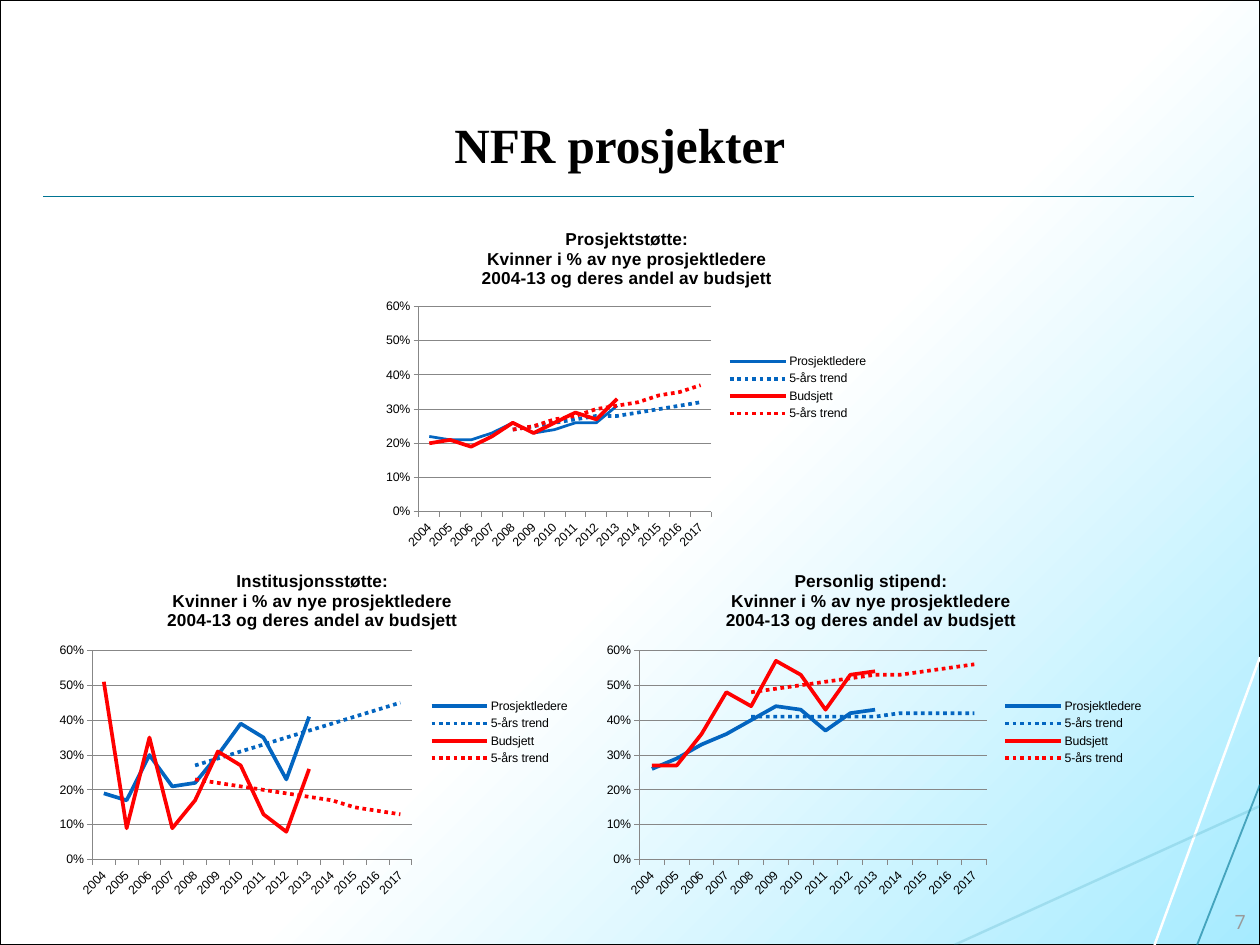
from pptx import Presentation
from pptx import util as u
from pptx.chart import data
from pptx.dml import color
from pptx.enum import chart as kinds, dml, shapes, text
from pptx.oxml import parse_xml
from pptx.oxml.ns import nsdecls, qn

COLORS = {
    "white": "FFFFFF", "black": "000000", "sky": "A6EBFF", "teal": "007492",
    "sea": "1184A0", "number": "9A9A9A", "grid": "878787",
    "leaders": "0365C0", "budget": "FF0000",
}
YEARS = [str(year) for year in range(2004, 2018)]
SERIES = [("Prosjektledere", "leaders"), ("5-års trend", "leaders"),
          ("Budsjett", "budget"), ("5-års trend", "budget")]
CHARTS = [
    {"heading": "Prosjektstøtte:", "box": (4.28, 2.42, 5.59, 3.86),
     "plot_width": 0.59, "first_weight": 2.25,
     "values": [
         [0.22, 0.21, 0.21, 0.23, 0.26, 0.23, 0.24, 0.26, 0.26, 0.31],
         [0.24, 0.25, 0.26, 0.27, 0.28, 0.28, 0.29, 0.3, 0.31, 0.32],
         [0.2, 0.21, 0.19, 0.22, 0.26, 0.23, 0.26, 0.29, 0.27, 0.33],
         [0.24, 0.25, 0.27, 0.28, 0.3, 0.31, 0.32, 0.34, 0.35, 0.37]]},
    {"heading": "Institusjonsstøtte:", "box": (0.57, 6.28, 5.91, 3.94),
     "plot_width": 0.61, "first_weight": 3,
     "values": [
         [0.19, 0.17, 0.3, 0.21, 0.22, 0.3, 0.39, 0.35, 0.23, 0.41],
         [0.27, 0.29, 0.31, 0.33, 0.35, 0.37, 0.39, 0.41, 0.43, 0.45],
         [0.51, 0.09, 0.35, 0.09, 0.17, 0.31, 0.27, 0.13, 0.08, 0.26],
         [0.23, 0.22, 0.21, 0.2, 0.19, 0.18, 0.17, 0.15, 0.14, 0.13]]},
    {"heading": "Personlig stipend:", "box": (6.72, 6.28, 6.22, 3.94),
     "plot_width": 0.63, "first_weight": 3,
     "values": [
         [0.26, 0.29, 0.33, 0.36, 0.4, 0.44, 0.43, 0.37, 0.42, 0.43],
         [0.41, 0.41, 0.41, 0.41, 0.41, 0.41, 0.42, 0.42, 0.42, 0.42],
         [0.27, 0.27, 0.36, 0.48, 0.44, 0.57, 0.53, 0.43, 0.53, 0.54],
         [0.48, 0.49, 0.5, 0.51, 0.52, 0.53, 0.53, 0.54, 0.55, 0.56]]},
]


def rgb(name):
    """Return the named colour."""
    return color.RGBColor.from_string(COLORS[name])


def inches(*lengths):
    """Convert several lengths at once."""
    return [u.Inches(length) for length in lengths]


def add_line(page, start, end, shade, weight, opacity=100):
    """Draw a straight line without shadow, partly see-through if asked."""
    line = page.shapes.add_connector(shapes.MSO_CONNECTOR.STRAIGHT, *inches(*start, *end))
    line.line.color.rgb = rgb(shade)
    line.line.width = u.Pt(weight)
    properties = line._element.spPr
    if opacity < 100:
        properties.find(".//" + qn("a:srgbClr")).append(
            parse_xml(f'<a:alpha {nsdecls("a")} val="{opacity * 1000}"/>'))
    properties.append(parse_xml(f'<a:effectLst {nsdecls("a")}/>'))


def add_backdrop(page, width, height):
    """Paint the framed gradient and the lines in the lower right corner."""
    panel = page.shapes.add_shape(shapes.MSO_SHAPE.RECTANGLE, *inches(0, 0, width, height))
    panel.shadow.inherit = False
    panel.line.color.rgb = rgb("black")
    panel.line.width = u.Pt(1)
    panel.fill.gradient()
    panel.fill.gradient_angle = 315
    for stop, shade, position in zip(panel.fill.gradient_stops, ("white", "sky"), (0.54, 1)):
        stop.color.rgb = rgb(shade)
        stop.position = position
    add_line(page, (width, 7.42), (13.03, height), "white", 2)
    add_line(page, (width, 9.1), (10.77, height), "sea", 2, 16)
    add_line(page, (width, 8.86), (13.51, height), "teal", 1.5, 60)


def add_text(page, box, words, font, size, shade, align, bold=False):
    """Place one line of formatted text in a box."""
    frame = page.shapes.add_textbox(*inches(*box)).text_frame
    frame.word_wrap = True
    frame.text = words
    para = frame.paragraphs[0]
    para.alignment = align
    span = para.runs[0]
    span.font.name = font
    span.font.size = u.Pt(size)
    span.font.bold = bold
    span.font.color.rgb = rgb(shade)
    return frame


def layout(x, y, size=None):
    """Return a manual chart layout, with an inner plot size if given."""
    target = '<c:layoutTarget val="inner"/>' if size else ""
    extent = f'<c:w val="{size[0]}"/><c:h val="{size[1]}"/>' if size else ""
    return parse_xml(
        f'<c:layout {nsdecls("c")}><c:manualLayout>{target}'
        f'<c:xMode val="edge"/><c:yMode val="edge"/><c:x val="{x}"/><c:y val="{y}"/>'
        f'{extent}</c:manualLayout></c:layout>')


def arrange_chart(chart, plot_width):
    """Fix the plot and legend places and leave the chart see-through."""
    clear = f'<c:spPr {nsdecls("c", "a")}><a:noFill/><a:ln><a:noFill/></a:ln></c:spPr>'
    space = chart._chartSpace
    space.find(qn("c:chart")).addnext(parse_xml(clear))
    plot = space.find(".//" + qn("c:plotArea"))
    for old in plot.findall(qn("c:layout")):
        plot.remove(old)
    plot.insert(0, layout(0.08, 0.27, (plot_width, 0.6)))
    plot.append(parse_xml(clear))
    legend = space.find(".//" + qn("c:legend"))
    for old in legend.findall(qn("c:layout")):
        legend.remove(old)
    legend.find(qn("c:legendPos")).addnext(layout(round(plot_width + 0.11, 2), 0.4))


def format_axes(chart):
    """Style both axes and the grid."""
    years, share = chart.category_axis, chart.value_axis
    share.minimum_scale, share.maximum_scale, share.major_unit = 0, 0.6, 0.1
    share.has_major_gridlines = True
    share.tick_labels.number_format = "0%"
    share.tick_labels.number_format_is_linked = False
    for line in (years.format.line, share.format.line, share.major_gridlines.format.line):
        line.color.rgb = rgb("grid")
        line.width = u.Pt(0.75)
    for axis in (years, share):
        axis.major_tick_mark = kinds.XL_TICK_MARK.OUTSIDE
        axis.tick_labels.font.size = u.Pt(10)
    years._element.find(".//" + qn("a:bodyPr")).set("rot", "-2700000")


def add_trend_chart(page, box, heading, values, plot_width, first_weight):
    """Add a line chart of shares with dotted five-year trends."""
    table = data.CategoryChartData(number_format="0%")
    table.categories = YEARS
    gap = [None] * 4
    for index, (name, shade) in enumerate(SERIES):
        table.add_series(name, gap + values[index] if index % 2 else values[index] + gap)
    chart = page.shapes.add_chart(kinds.XL_CHART_TYPE.LINE, *inches(*box), table).chart
    chart.font.name = "Arial"
    chart.font.size = u.Pt(10)
    chart.font.color.rgb = rgb("black")
    chart.has_title = True
    title = chart.chart_title.text_frame
    title.text = f"{heading}\nKvinner i % av nye prosjektledere\n2004-13 og deres andel av budsjett"
    for para in title.paragraphs:
        para.font.name = "Arial"
        para.font.size = u.Pt(14)
        para.font.bold = True
        para.font.color.rgb = rgb("black")
    chart.has_legend = True
    chart.legend.position = kinds.XL_LEGEND_POSITION.RIGHT
    chart.legend.include_in_layout = False
    chart.plots[0].vary_by_categories = False
    for index, series in enumerate(chart.plots[0].series):
        series.smooth = False
        series.format.line.color.rgb = rgb(SERIES[index][1])
        series.format.line.width = u.Pt(3 if index else first_weight)
        if index % 2:
            series.format.line.dash_style = dml.MSO_LINE.ROUND_DOT
    format_axes(chart)
    arrange_chart(chart, plot_width)


def main():
    """Build and save the slide."""
    deck = Presentation()
    width, height = 14.22, 10.67
    deck.slide_width, deck.slide_height = inches(width, height)
    page = deck.slides.add_slide(deck.slide_layouts[6])
    add_backdrop(page, width, height)
    add_line(page, (0.49, 2.22), (13.47, 2.22), "teal", 1)
    add_text(page, (0.5, 1.24, 12.99, 1.46), "NFR prosjekter", "Times New Roman", 40,
             "black", text.PP_ALIGN.CENTER, True)
    number = add_text(page, (13.75, 10.21, 0.35, 0.39), "7", "Open Sans", 16,
                      "number", text.PP_ALIGN.RIGHT)
    number.vertical_anchor = text.MSO_ANCHOR.MIDDLE
    number.margin_left = number.margin_right = u.Inches(0.04)
    number.margin_top = number.margin_bottom = u.Inches(0.04)
    for chart in CHARTS:
        add_trend_chart(page, **chart)
    deck.save("out.pptx")


if __name__ == "__main__":
    main()
